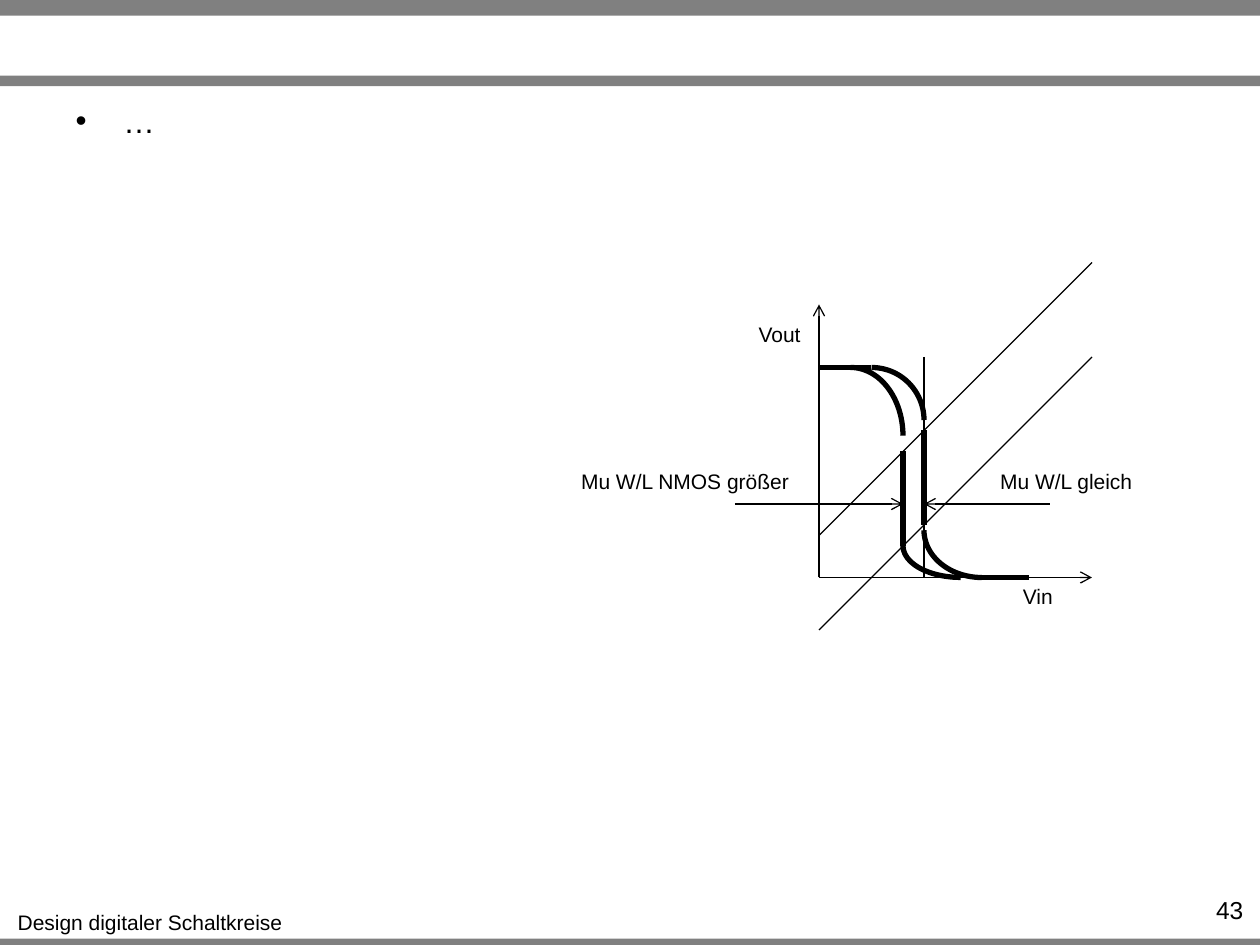
"""Build a slide on inverter transfer curves, laid out on a 120 by 90 grid."""
import pptx
import pptx.util
import pptx.dml.color
import pptx.enum.shapes
import pptx.enum.text
import pptx.oxml.ns
import lxml.etree

SHAPE = pptx.enum.shapes.MSO_SHAPE
ALIGN = pptx.enum.text.PP_ALIGN
BLACK, GREY = "000000", "808080"
THIN, THICK = 0.75, 3

prs = pptx.Presentation()
prs.slide_width = pptx.util.Inches(10)
prs.slide_height = pptx.util.Inches(7.5)
unit = prs.slide_width / 120


def rgb(value):
    return pptx.dml.color.RGBColor.from_string(value)


def write(sp, text, size=12, align=ALIGN.CENTER, wrap=False, color=BLACK, font="Arial"):
    tf = sp.text_frame
    tf.word_wrap = wrap
    p = tf.paragraphs[0]
    p.alignment = align
    r = p.add_run()
    r.text = text
    r.font.size = pptx.util.Pt(size)
    r.font.name = font
    r.font.color.rgb = rgb(color)
    return p


s = prs.slides.add_slide(prs.slide_layouts[1])
title = s.shapes.title._element
title.getparent().remove(title)

for top, height in [(89.4, 0.6), (0, 1.5), (7.2, 1)]:
    sp = s.shapes.add_shape(SHAPE.RECTANGLE, 0, int(top * unit), prs.slide_width, int(height * unit))
    sp.shadow.inherit = False
    sp.fill.solid()
    sp.fill.fore_color.rgb = rgb(GREY)
    sp.line.fill.background()

body = s.placeholders[1]
body.left, body.top, body.width, body.height = [int(v * unit) for v in (6, 9.1, 108, 7.9)]
p = write(body, "…", size=18, align=ALIGN.LEFT, wrap=True)
indent = pptx.util.Inches(0.38)
pPr = p._p.get_or_add_pPr()
pPr.set("marL", str(indent))
pPr.set("indent", str(-indent))

lines = [
    (78, 55, 104, 55, THIN, True),
    (78, 55, 78, 29, THIN, True),
    (78, 51, 104, 25, THIN, False),
    (78, 60, 104, 34, THIN, False),
    (88, 34, 88, 55, THIN, False),
    (100, 48, 88, 48, THIN, True),
    (70, 48, 86, 48, THIN, True),
    (93, 55, 98, 55, THICK, False),
    (78, 35, 83, 35, THICK, False),
    (88, 50, 88, 41, THICK, False),
    (86, 52, 86, 43, THICK, False),
]
for x1, y1, x2, y2, weight, arrow in lines:
    ends = [int(v * unit) for v in (x1, y1, x2, y2)]
    line = s.shapes.add_connector(pptx.enum.shapes.MSO_CONNECTOR.STRAIGHT, *ends)
    line.line.color.rgb = rgb(BLACK)
    line.line.width = pptx.util.Pt(weight)
    if arrow:
        tail = lxml.etree.SubElement(line.line._get_or_add_ln(), pptx.oxml.ns.qn("a:tailEnd"))
        tail.set("type", "arrow")
    lxml.etree.SubElement(line._element.spPr, pptx.oxml.ns.qn("a:effectLst"))

arcs = [
    (89, 45, 9, 11, "flipH"),
    (78, 35, 10, 10, "flipV"),
    (74.5, 36.5, 13, 10, "flipV"),
    (88.5, 46.5, 6, 11, "flipH"),
]
for x, y, width, height, flip in arcs:
    sp = s.shapes.add_shape(SHAPE.ARC, *[int(v * unit) for v in (x, y, width, height)])
    sp.rotation = 270
    sp._element.spPr.get_or_add_xfrm().set(flip, "1")
    sp.shadow.inherit = False
    sp.fill.background()
    sp.line.color.rgb = rgb(BLACK)
    sp.line.width = pptx.util.Pt(THICK)

labels = [
    ("Design digitaler Schaltkreise", 0.4, 86, 27.8, {}),
    ("43", 109.2, 84.7, 10.4, {"size": 14, "align": ALIGN.RIGHT, "wrap": True}),
    ("Vout", 71, 30, 6.5, {}),
    ("Vin", 96.2, 55, 5.3, {}),
    ("Mu W/L gleich", 94, 44, 15.1, {}),
    ("Mu W/L NMOS größer", 54, 44, 22.5, {}),
]
for text, x, y, width, style in labels:
    sp = s.shapes.add_textbox(*[int(v * unit) for v in (x, y, width, 3.6)])
    write(sp, text, **style)

prs.save("out.pptx")
